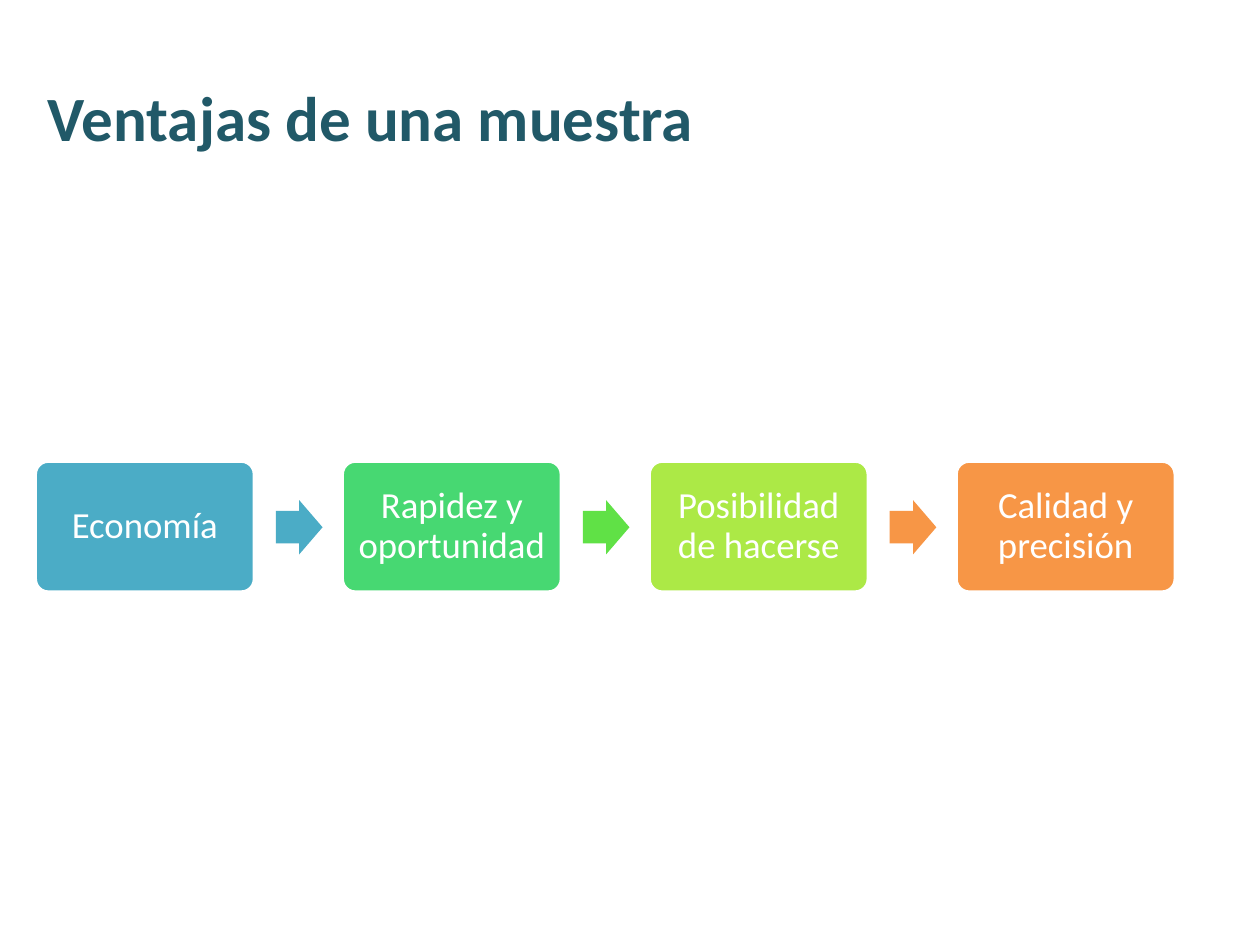
from pptx import Presentation
from pptx.dml.color import RGBColor
from pptx.enum.shapes import MSO_SHAPE
from pptx.enum.text import MSO_ANCHOR, PP_ALIGN
from pptx.util import Inches, Pt

ROUNDED = MSO_SHAPE.ROUNDED_RECTANGLE
RIGHT_ARROW = MSO_SHAPE.RIGHT_ARROW
MIDDLE = MSO_ANCHOR.MIDDLE
LEFT, CENTER = PP_ALIGN.LEFT, PP_ALIGN.CENTER

FONT = "Calibri"
COLORS = {
    "title": "215968",
    "white": "FFFFFF",
    "blue": "4BACC6",
    "green": "47D872",
    "bright_green": "60E146",
    "lime": "ACE946",
    "orange": "F79646",
}
STEPS = [
    ("Economía", "blue", "blue"),
    ("Rapidez y oportunidad", "green", "bright_green"),
    ("Posibilidad de hacerse", "lime", "orange"),
    ("Calidad y precisión", "orange", None),
]
FIRST_LEFT = 0.28
STEP_PITCH = 2.436
ARROW_OFFSET = 1.91


def color(name):
    return RGBColor.from_string(COLORS[name])


def format_paragraph(paragraph, size, color_name, alignment, bold=False):
    paragraph.alignment = alignment
    paragraph.font.name = FONT
    paragraph.font.size = Pt(size)
    paragraph.font.bold = bold
    paragraph.font.color.rgb = color(color_name)


def set_title(slide, text):
    title = slide.shapes.title
    title.left, title.top = Inches(0.28), Inches(0.3)
    title.width, title.height = Inches(8.98), Inches(1.25)
    frame = title.text_frame
    frame.text = text
    frame.vertical_anchor = MIDDLE
    format_paragraph(frame.paragraphs[0], 36, "title", LEFT, bold=True)


def add_filled_shape(slide, kind, left, top, width, height, fill):
    shape = slide.shapes.add_shape(
        kind, Inches(left), Inches(top), Inches(width), Inches(height)
    )
    shape.shadow.inherit = False
    shape.fill.solid()
    shape.fill.fore_color.rgb = color(fill)
    return shape


def add_step(slide, left, text, fill):
    box = add_filled_shape(slide, ROUNDED, left, 3.66, 1.74, 1.04, fill)
    box.adjustments[0] = 0.1
    box.line.color.rgb = color("white")
    box.line.width = Pt(2)
    frame = box.text_frame
    frame.word_wrap = True
    frame.vertical_anchor = MIDDLE
    frame.margin_left = frame.margin_right = Inches(0.09)
    frame.margin_top = frame.margin_bottom = Inches(0.09)
    frame.text = text
    paragraph = frame.paragraphs[0]
    paragraph.line_spacing = 0.9
    format_paragraph(paragraph, 21, "white", CENTER)


def add_arrow(slide, left, fill):
    arrow = add_filled_shape(slide, RIGHT_ARROW, left, 3.97, 0.37, 0.43, fill)
    arrow.adjustments[0] = 0.6
    arrow.adjustments[1] = 0.5
    arrow.line.fill.background()


def main():
    presentation = Presentation()
    presentation.slide_width = Inches(10)
    presentation.slide_height = Inches(7.5)
    slide = presentation.slides.add_slide(presentation.slide_layouts[5])
    set_title(slide, "Ventajas de una muestra")
    for index, (text, box_fill, arrow_fill) in enumerate(STEPS):
        left = FIRST_LEFT + index * STEP_PITCH
        add_step(slide, left, text, box_fill)
        if arrow_fill:
            add_arrow(slide, left + ARROW_OFFSET, arrow_fill)
    presentation.save("out.pptx")


if __name__ == "__main__":
    main()
